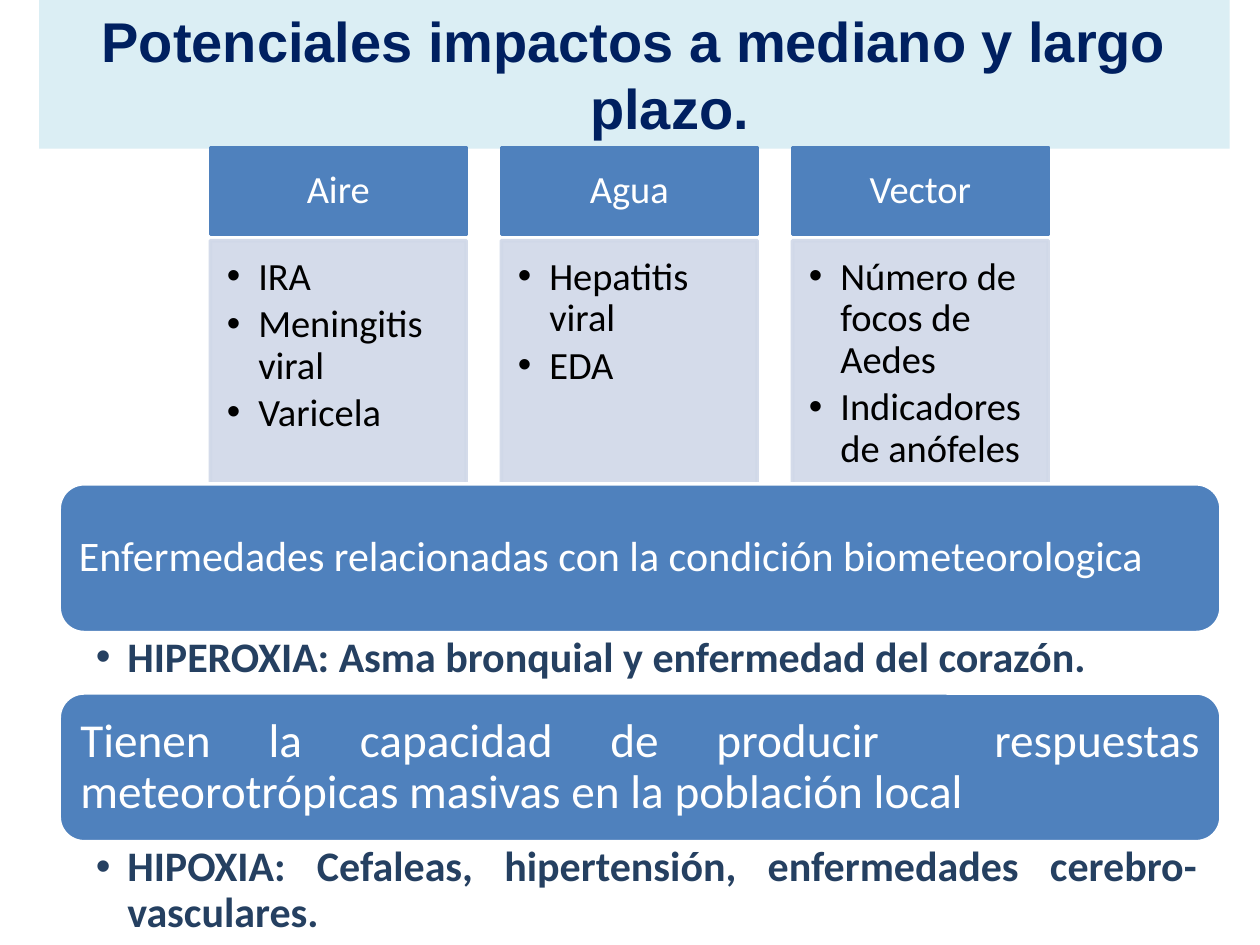
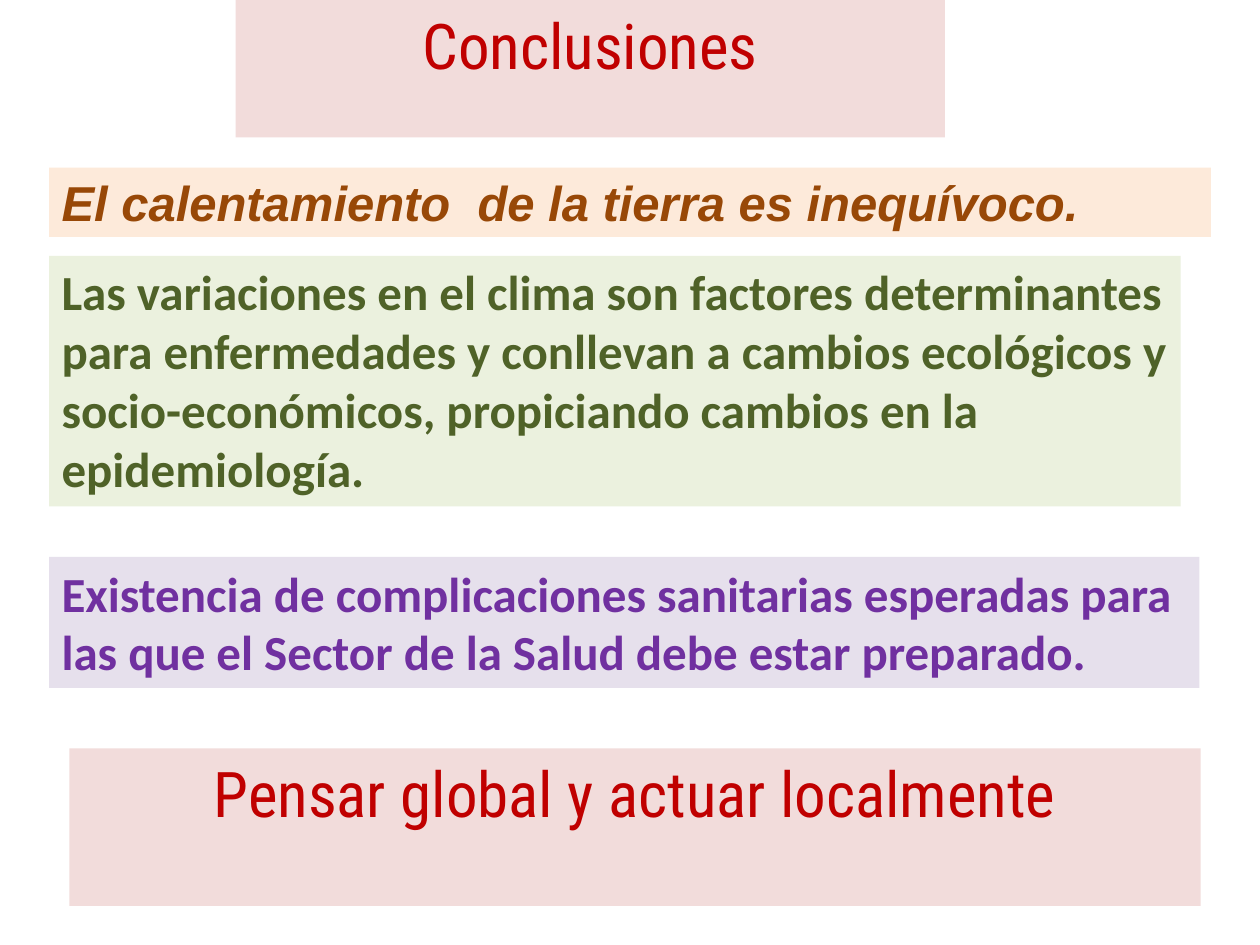
from lxml import etree
from pptx import Presentation
from pptx.dml.color import RGBColor
from pptx.enum import shapes, text
from pptx.oxml.ns import qn
from pptx.util import Inches, Pt

RECT = shapes.MSO_SHAPE.RECTANGLE
ROUND = shapes.MSO_SHAPE.ROUNDED_RECTANGLE
LEFT, CENTER, JUSTIFY = text.PP_ALIGN.LEFT, text.PP_ALIGN.CENTER, text.PP_ALIGN.JUSTIFY
TOP, MIDDLE = text.MSO_ANCHOR.TOP, text.MSO_ANCHOR.MIDDLE

BLUE, PALE_BLUE, WHITE, BLACK = "4F81BD", "D0D8E8", "FFFFFF", "000000"
NAVY, RED, ROSE = "254061", "C00000", "F2DCDB"
PLAIN_INSETS = (0.1, 0.05, 0.1, 0.05)


def rgb(value):
    return RGBColor.from_string(value)


def assign(obj, values):
    for name, value in values.items():
        setattr(obj, name, value)


class Deck:
    font = "Calibri"

    def __init__(self):
        self.prs = Presentation()
        self.prs.slide_width, self.prs.slide_height = Inches(10), Inches(7.5)
        self.s = None

    def slide(self):
        self.s = self.prs.slides.add_slide(self.prs.slide_layouts[6])

    def panel(self, at, fill, kind=RECT, line=None, alpha=None):
        sp = self.s.shapes.add_shape(kind, *map(Inches, at))
        sp.shadow.inherit = False
        sp.fill.solid()
        sp.fill.fore_color.rgb = rgb(fill)
        if line:
            sp.line.color.rgb = rgb(line)
            sp.line.width = Pt(2)
        else:
            sp.line.fill.background()
        if alpha:
            for color in sp._element.spPr.iter(qn("a:srgbClr")):
                etree.SubElement(color, qn("a:alpha"), val=str(alpha * 1000))
        return sp

    def textbox(self, at):
        return self.s.shapes.add_textbox(*map(Inches, at))

    def put_text(self, sp, lines, size, color, align=LEFT, anchor=TOP,
                 insets=PLAIN_INSETS, spacing=1.0, after=0, indent=0, bullet=False, **font):
        tf = sp.text_frame
        sides = ("margin_left", "margin_top", "margin_right", "margin_bottom")
        assign(tf, {"word_wrap": True, "vertical_anchor": anchor,
                    **dict(zip(sides, map(Inches, insets)))})
        for i, line in enumerate(lines):
            p = tf.add_paragraph() if i else tf.paragraphs[0]
            assign(p, {"alignment": align, "line_spacing": spacing,
                       "space_after": Pt(size * after)})
            pPr = p._p.get_or_add_pPr()
            if indent:
                pPr.set("marL", str(Inches(indent)))
                pPr.set("indent", str(-Inches(indent)))
            if bullet:
                etree.SubElement(pPr, qn("a:buFont"), typeface="Arial")
                etree.SubElement(pPr, qn("a:buChar"), char="•")
            r = p.add_run()
            r.text = line
            assign(r.font, {"name": self.font, "size": Pt(size), **font})
            r.font.color.rgb = rgb(color)

    def bullets(self, sp, lines, size, color, **style):
        self.put_text(sp, lines, size, color, spacing=0.9, indent=0.25, bullet=True, **style)

    def column(self, left, heading, items):
        head = self.panel((left, 1.17, 2.03, 0.69), BLUE, line=BLUE)
        self.put_text(head, [heading], 22, WHITE, CENTER, MIDDLE,
                      insets=(0.17, 0.1, 0.17, 0.1), spacing=0.9)
        body = self.panel((left, 1.91, 2.03, 2.06), PALE_BLUE, line=PALE_BLUE, alpha=90)
        self.bullets(body, items, 22, BLACK, insets=(0.13, 0.13, 0.17, 0.19), after=0.15)

    def section(self, top, heading, size, inset, detail, height, align):
        bar = self.panel((0.47, top, 9.22, 1.18), BLUE, ROUND, line=WHITE)
        self.put_text(bar, [heading], size, WHITE, JUSTIFY, MIDDLE,
                      insets=(inset,) * 4, spacing=0.9)
        note = self.textbox((0.47, top + 1.18, 9.22, height))
        self.bullets(note, [detail], 24, NAVY, align=align,
                     insets=(0.29, 0.03, 0.19, 0.03), bold=True)

    def banner(self, at, line):
        self.put_text(self.panel(at, ROSE), [line], 36, RED, CENTER, name="Roboto Condensed")

    def statement(self, at, fill, line, color, **style):
        self.put_text(self.panel(at, fill), [line], 28, color, bold=True, **style)


def impacts(deck):
    deck.slide()
    title = deck.panel((0.31, 0, 9.45, 1.18), "DBEEF4")
    deck.put_text(title, ["Potenciales impactos a mediano y largo plazo."], 32, "002060",
                  CENTER, indent=0.56, name="Arial", bold=True)
    columns = [
        ("Aire", ["IRA", "Meningitis viral", "Varicela"]),
        ("Agua", ["Hepatitis viral", "EDA"]),
        ("Vector", ["Número de focos de Aedes", "Indicadores de anófeles"]),
    ]
    for i, (heading, items) in enumerate(columns):
        deck.column(1.67 + i * 2.31, heading, items)
    deck.section(3.84, "Enfermedades relacionadas con la condición biometeorologica", 24, 0.1,
                 "HIPEROXIA: Asma bronquial y enfermedad del corazón.", 0.49, LEFT)
    deck.section(5.5, "Tienen la capacidad de producir  respuestas meteorotrópicas masivas "
                 "en la población local", 27, 0.11,
                 "HIPOXIA: Cefaleas, hipertensión, enfermedades cerebro-vasculares.",
                 0.81, JUSTIFY)


def conclusions(deck):
    deck.slide()
    deck.banner((1.87, 0, 5.63, 1.09), "Conclusiones")
    deck.statement((0.39, 1.33, 9.22, 0.55), "FDEADA",
                   "El calentamiento  de la tierra es inequívoco.", "984807",
                   anchor=MIDDLE, name="Arial", italic=True)
    deck.statement((0.39, 2.03, 8.98, 1.99), "EBF1DE",
                   "Las variaciones en el clima son factores determinantes para enfermedades "
                   "y conllevan a cambios ecológicos y socio-económicos, propiciando cambios "
                   "en la epidemiología.", "4F6228")
    deck.statement((0.39, 4.42, 9.13, 1.04), "E6E0EC",
                   "Existencia de complicaciones sanitarias esperadas para las que el Sector "
                   "de la Salud debe estar preparado.", "7030A0")
    deck.banner((0.55, 5.94, 8.98, 1.25), "Pensar global y actuar localmente")


def main():
    deck = Deck()
    impacts(deck)
    conclusions(deck)
    deck.prs.save("out.pptx")


if __name__ == "__main__":
    main()
